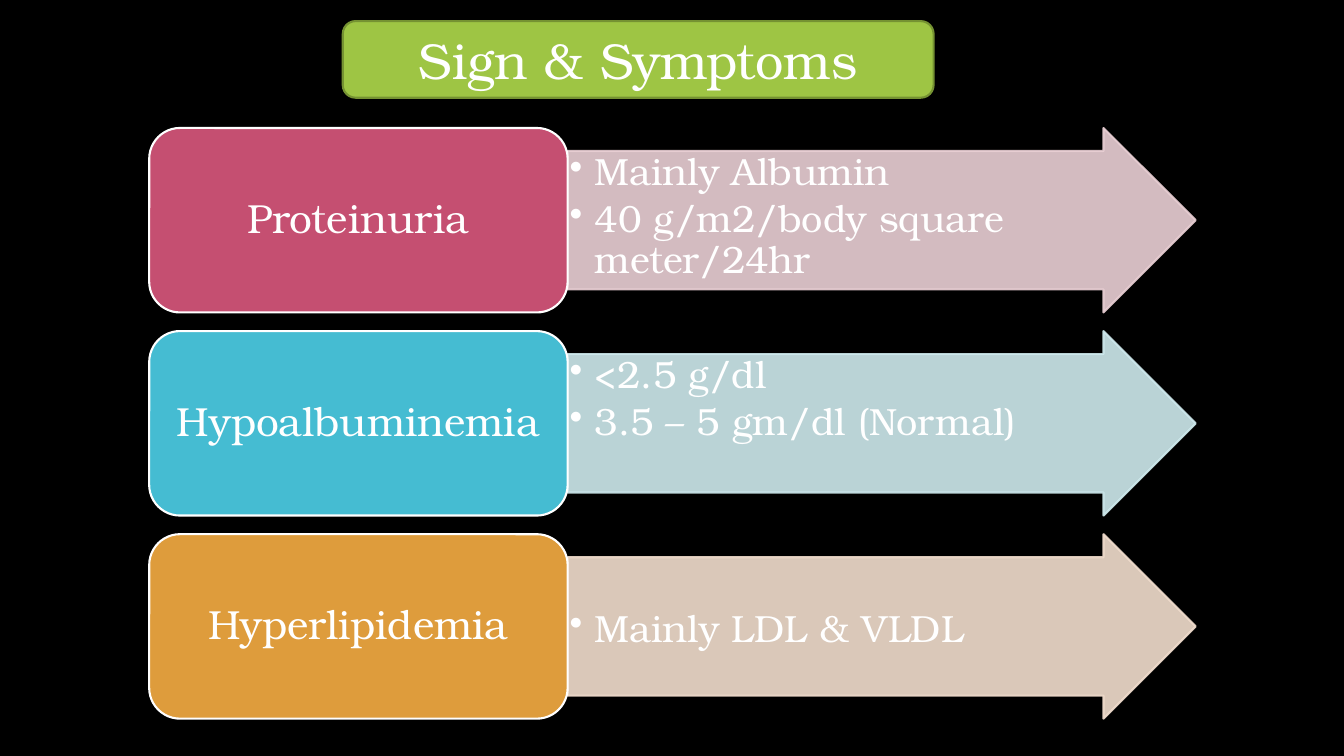
from lxml.etree import SubElement
from pptx import Presentation
from pptx.dml.color import RGBColor
from pptx.enum.shapes import MSO_SHAPE
from pptx.enum.text import MSO_ANCHOR, PP_ALIGN
from pptx.oxml.ns import qn
from pptx.util import Inches, Pt

FONT = "TeX Gyre Bonum"
BLACK = RGBColor(0x00, 0x00, 0x00)
WHITE = RGBColor(0xFF, 0xFF, 0xFF)
GREEN = RGBColor(0x9E, 0xC5, 0x44)
DARK_GREEN = RGBColor(0x75, 0x92, 0x32)
ROSE = RGBColor(0xC5, 0x4F, 0x71)
PALE_ROSE = RGBColor(0xEA, 0xD0, 0xD5)
TEAL = RGBColor(0x45, 0xBC, 0xD2)
PALE_TEAL = RGBColor(0xCF, 0xEA, 0xEE)
ORANGE = RGBColor(0xDE, 0x9C, 0x3C)
PALE_ORANGE = RGBColor(0xF2, 0xDE, 0xCE)

# Sign, its colour, the arrow's colour, details, top inset of the details
SIGNS = [
    ("Proteinuria", ROSE, PALE_ROSE,
     ["Mainly Albumin", "40 g/m2/body square meter/24hr"], 0.02),
    ("Hypoalbuminemia", TEAL, PALE_TEAL,
     ["<2.5 g/dl", "3.5 – 5 gm/dl (Normal)"], 0.02),
    ("Hyperlipidemia", ORANGE, PALE_ORANGE, ["Mainly LDL & VLDL"], 0.52),
]
FIRST_TOP, ROW_PITCH, ROW_HEIGHT = 1.27, 2.015, 1.83
SIGN_LEFT, SIGN_WIDTH, ARROW_WIDTH = 1.48, 4.15, 6.23


def add_panel(slide, preset, left, top, width, height, fill, line):
    panel = slide.shapes.add_shape(
        preset, Inches(left), Inches(top), Inches(width), Inches(height))
    panel.shadow.inherit = False
    panel.fill.solid()
    panel.fill.fore_color.rgb = fill
    panel.line.color.rgb = line
    panel.line.width = Pt(1.5)
    panel.text_frame.word_wrap = True
    return panel


def set_margins(frame, side, top, bottom):
    frame.margin_left = frame.margin_right = Inches(side)
    frame.margin_top = Inches(top)
    frame.margin_bottom = Inches(bottom)


def style_paragraph(paragraph, text, size, align):
    paragraph.text = text
    paragraph.alignment = align
    paragraph.font.name = FONT
    paragraph.font.size = Pt(size)
    paragraph.font.color.rgb = WHITE


def add_label(slide, text, size, left, top, width, height, fill, line):
    label = add_panel(slide, MSO_SHAPE.ROUNDED_RECTANGLE,
                      left, top, width, height, fill, line)
    frame = label.text_frame
    frame.vertical_anchor = MSO_ANCHOR.MIDDLE
    set_margins(frame, 0.1, 0.05, 0.05)
    style_paragraph(frame.paragraphs[0], text, size, PP_ALIGN.CENTER)
    return label


def add_bullet(paragraph):
    properties = paragraph._p.get_or_add_pPr()
    properties.set("marL", str(Inches(0.25)))
    properties.set("indent", str(Inches(-0.25)))
    SubElement(properties, qn("a:buChar")).set("char", "•")


def add_detail_arrow(slide, details, top, color, top_inset):
    arrow = add_panel(slide, MSO_SHAPE.RIGHT_ARROW, SIGN_LEFT + SIGN_WIDTH,
                      top, ARROW_WIDTH, ROW_HEIGHT, color, color)
    arrow.adjustments[0] = 0.75
    # Fill and outline are slightly transparent
    for tint in arrow._element.spPr.iter(qn("a:srgbClr")):
        SubElement(tint, qn("a:alpha")).set("val", "90000")

    frame = arrow.text_frame
    frame.vertical_anchor = MSO_ANCHOR.TOP
    set_margins(frame, 0.02, top_inset, 0.02)
    for index, detail in enumerate(details):
        paragraph = frame.add_paragraph() if index else frame.paragraphs[0]
        style_paragraph(paragraph, detail, 27, PP_ALIGN.LEFT)
        paragraph.line_spacing = 0.9
        paragraph.space_after = Pt(4.3)
        add_bullet(paragraph)


def main():
    presentation = Presentation()
    presentation.slide_width = Inches(13.33)
    presentation.slide_height = Inches(7.5)
    slide = presentation.slides.add_slide(presentation.slide_layouts[6])
    slide.background.fill.solid()
    slide.background.fill.fore_color.rgb = BLACK

    # Rows: sign on the left, its details in the arrow
    for row, (sign, color, pale, details, top_inset) in enumerate(SIGNS):
        top = FIRST_TOP + row * ROW_PITCH
        add_detail_arrow(slide, details, top, pale, top_inset)
        sign_label = add_label(slide, sign, 29, SIGN_LEFT, top, SIGN_WIDTH,
                               ROW_HEIGHT, color, WHITE)
        sign_label.text_frame.paragraphs[0].line_spacing = 0.9

    # Title
    add_label(slide, "Sign & Symptoms", 36, 3.4, 0.21, 5.86, 0.76,
              GREEN, DARK_GREEN)
    presentation.save("out.pptx")


if __name__ == "__main__":
    main()
